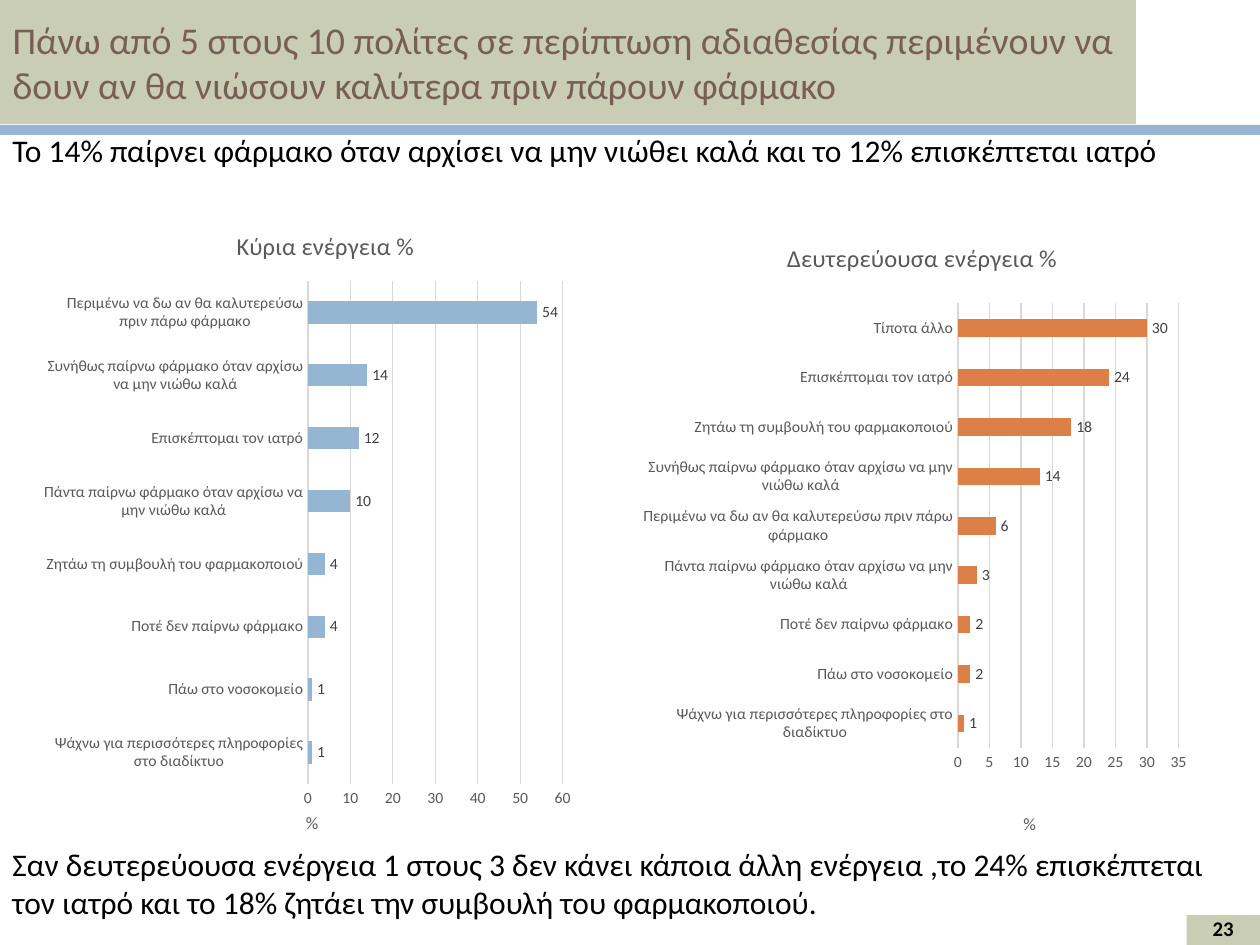
from lxml import etree
from pptx import Presentation
from pptx.chart.data import CategoryChartData
from pptx.dml.color import RGBColor
from pptx.enum.chart import XL_CHART_TYPE, XL_LABEL_POSITION, XL_TICK_MARK
from pptx.enum.shapes import MSO_SHAPE
from pptx.enum.text import MSO_ANCHOR, PP_ALIGN
from pptx.oxml.ns import qn
from pptx.util import Cm, Pt

SAGE = RGBColor(0xC9, 0xCD, 0xB3)
BLUE = RGBColor(0x94, 0xB6, 0xD2)
ORANGE = RGBColor(0xDD, 0x80, 0x47)
BROWN = RGBColor(0x77, 0x5F, 0x55)
BLACK = RGBColor(0, 0, 0)
GREY = RGBColor(0x59, 0x59, 0x59)
DARK = RGBColor(0x40, 0x40, 0x40)
PALE = RGBColor(0xD9, 0xD9, 0xD9)
FONT = "Calibri"

WEB = "Ψάχνω για περισσότερες πληροφορίες στο διαδίκτυο"
CLINIC = "Πάω στο νοσοκομείο"
NEVER = "Ποτέ δεν παίρνω φάρμακο"
ASK = "Ζητάω τη συμβουλή του φαρμακοποιού"
ALWAYS = "Πάντα παίρνω φάρμακο όταν αρχίσω να μην νιώθω καλά"
DOCTOR = "Επισκέπτομαι τον ιατρό"
OFTEN = "Συνήθως παίρνω φάρμακο όταν αρχίσω να μην νιώθω καλά"
WAIT = "Περιμένω να δω αν θα καλυτερεύσω πριν πάρω φάρμακο"
NONE = "Τίποτα άλλο"


def style(font, size, color, bold=False):
    font.name, font.size, font.bold = FONT, Pt(size), bold
    font.color.rgb = color


def write(frame, text, size=18, color=BLACK, bold=False,
          align=PP_ALIGN.LEFT, anchor=MSO_ANCHOR.TOP):
    frame.word_wrap = True
    frame.vertical_anchor = anchor
    para = frame.paragraphs[0]
    para.alignment = align
    run = para.add_run()
    run.text = text
    style(run.font, size, color, bold)


def add_text(slide, box, text, **look):
    frame = slide.shapes.add_textbox(*map(Cm, box)).text_frame
    write(frame, text, **look)


def add_bar(slide, box, color):
    bar = slide.shapes.add_shape(MSO_SHAPE.RECTANGLE, *map(Cm, box))
    bar.shadow.inherit = False
    bar.fill.solid()
    bar.fill.fore_color.rgb = color
    bar.line.fill.background()


def set_layout(parent, before, inner=False, **spots):
    for old in parent.findall(qn("c:layout")):
        parent.remove(old)
    layout = etree.Element(qn("c:layout"))
    manual = etree.SubElement(layout, qn("c:manualLayout"))
    if inner:
        etree.SubElement(manual, qn("c:layoutTarget")).set("val", "inner")
    for key in ("x", "y"):
        etree.SubElement(manual, qn(f"c:{key}Mode")).set("val", "edge")
    for key, value in spots.items():
        etree.SubElement(manual, qn(f"c:{key}")).set("val", str(value))
    prior = parent.find(qn(before)) if before else None
    parent.insert(0 if prior is None else parent.index(prior) + 1, layout)


def add_title(owner, text, size, x, y):
    write(owner.text_frame, text, size=size, color=GREY)
    set_layout(owner._element, "c:tx", x=x, y=y)


def add_header(slide, box, text):
    title = slide.shapes.title
    title.left, title.top, title.width, title.height = map(Cm, box)
    title.fill.solid()
    title.fill.fore_color.rgb = SAGE
    write(title.text_frame, text, size=21.6, color=BROWN,
          anchor=MSO_ANCHOR.MIDDLE)
    add_bar(slide, (0, box[1] + box[3] + 0.02, 25.4, 0.2), BLUE)


def add_number(slide, box, text):
    left, top, width, height = box
    add_bar(slide, (left, top + 0.08, width, height - 0.08), SAGE)
    add_text(slide, box, text, size=11.9, bold=True,
             align=PP_ALIGN.CENTER, anchor=MSO_ANCHOR.MIDDLE)


def add_bars(slide, box, title, rows, color, top, step, plot, head, unit):
    data = CategoryChartData(number_format="#,##0")
    data.categories = [name for name, _ in rows]
    data.add_series("Series 1", [value for _, value in rows])
    chart = slide.shapes.add_chart(
        XL_CHART_TYPE.BAR_CLUSTERED, *map(Cm, box), data).chart
    style(chart.font, 10, BLACK)
    chart.has_legend = False
    chart.has_title = True
    add_title(chart.chart_title, title, 14, *head)
    chart.chart_title.include_in_layout = False
    set_layout(chart._chartSpace.chart.plotArea, None, inner=True,
               **dict(zip("xywh", plot)))

    for axis in (chart.category_axis, chart.value_axis):
        axis.major_tick_mark = axis.minor_tick_mark = XL_TICK_MARK.NONE
        style(axis.tick_labels.font, 9, GREY)
    names, scale = chart.category_axis, chart.value_axis
    names.format.line.color.rgb = PALE
    names.format.line.width = Pt(0.75)
    scale.format.line.fill.background()
    scale.major_gridlines.format.line.color.rgb = PALE
    scale.major_gridlines.format.line.width = Pt(0.75)
    scale.minimum_scale, scale.maximum_scale = 0, top
    scale.major_unit = step
    scale.tick_labels.number_format = "#,##0"
    scale.tick_labels.number_format_is_linked = False
    add_title(scale.axis_title, "%", 10, *unit)

    bars = chart.plots[0]
    bars.gap_width = 182
    bars.vary_by_categories = False
    series = bars.series[0]
    series.format.fill.solid()
    series.format.fill.fore_color.rgb = color
    labels = series.data_labels
    labels.show_value = True
    labels.number_format = "#,##0"
    labels.number_format_is_linked = False
    labels.position = XL_LABEL_POSITION.OUTSIDE_END
    style(labels.font, 9, DARK)
    return series


def main():
    deck = Presentation()
    deck.slide_width, deck.slide_height = Cm(25.4), Cm(19.05)
    slide = deck.slides.add_slide(deck.slide_layouts[5])
    add_header(slide, (0, 0, 22.9, 2.5),
               "Πάνω από 5 στους 10 πολίτες σε περίπτωση αδιαθεσίας περιμένουν "
               "να δουν αν θα νιώσουν καλύτερα πριν πάρουν φάρμακο")
    add_number(slide, (23.92, 18.37, 1.48, 0.68), "23")
    add_text(slide, (0, 2.52, 25.4, 1.03),
             "Το 14% παίρνει φάρμακο όταν αρχίσει να μην νιώθει καλά και το "
             "12% επισκέπτεται ιατρό")
    add_text(slide, (0, 16.92, 25.1, 1.8),
             "Σαν δευτερεύουσα ενέργεια 1 στους 3 δεν κάνει κάποια άλλη "
             "ενέργεια ,το 24% επισκέπτεται τον ιατρό και το 18% ζητάει την "
             "συμβουλή του φαρμακοποιού.")
    add_bars(slide, (0.89, 4.29, 11, 12.62), "Κύρια ενέργεια %",
             [(WEB, 1), (CLINIC, 1), (NEVER, 4), (ASK, 4), (ALWAYS, 10),
              (DOCTOR, 12), (OFTEN, 14), (WAIT, 54)],
             BLUE, top=60, step=10, plot=(0.48, 0.11, 0.47, 0.81),
             head=(0.34, 0.02), unit=(0.47, 0.96))
    second = add_bars(
        slide, (12.7, 4.52, 11.4, 12.4), "Δευτερεύουσα ενέργεια %",
        [(WEB, 1), (CLINIC, 2), (NEVER, 2), (ALWAYS, 3), (WAIT, 6),
         (OFTEN, 13), (ASK, 18), (DOCTOR, 24), (NONE, 30)],
        ORANGE, top=35, step=5, plot=(0.58, 0.13, 0.39, 0.73),
        head=(0.27, 0.02), unit=(0.69, 0.96))
    label = second.points[5].data_label
    write(label.text_frame, "14", size=9, color=DARK)
    label.position = XL_LABEL_POSITION.OUTSIDE_END
    deck.save("out.pptx")


if __name__ == "__main__":
    main()
